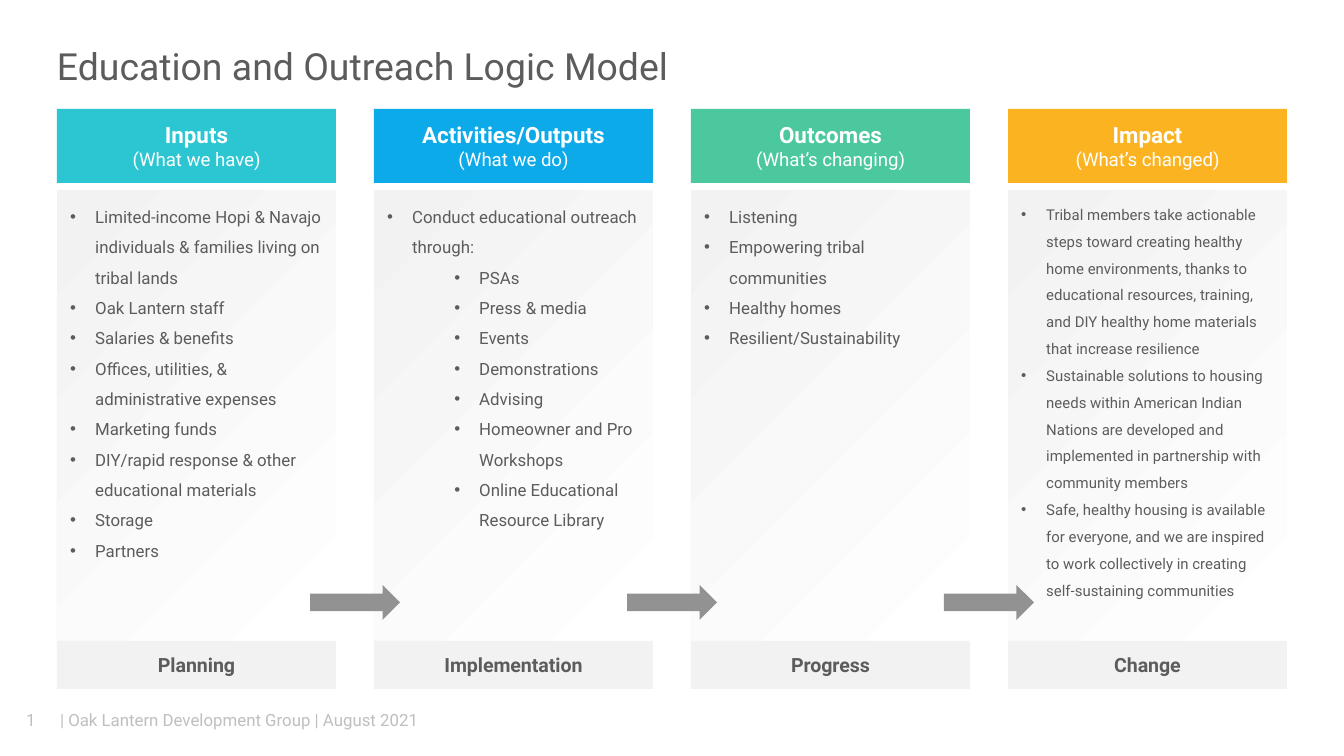
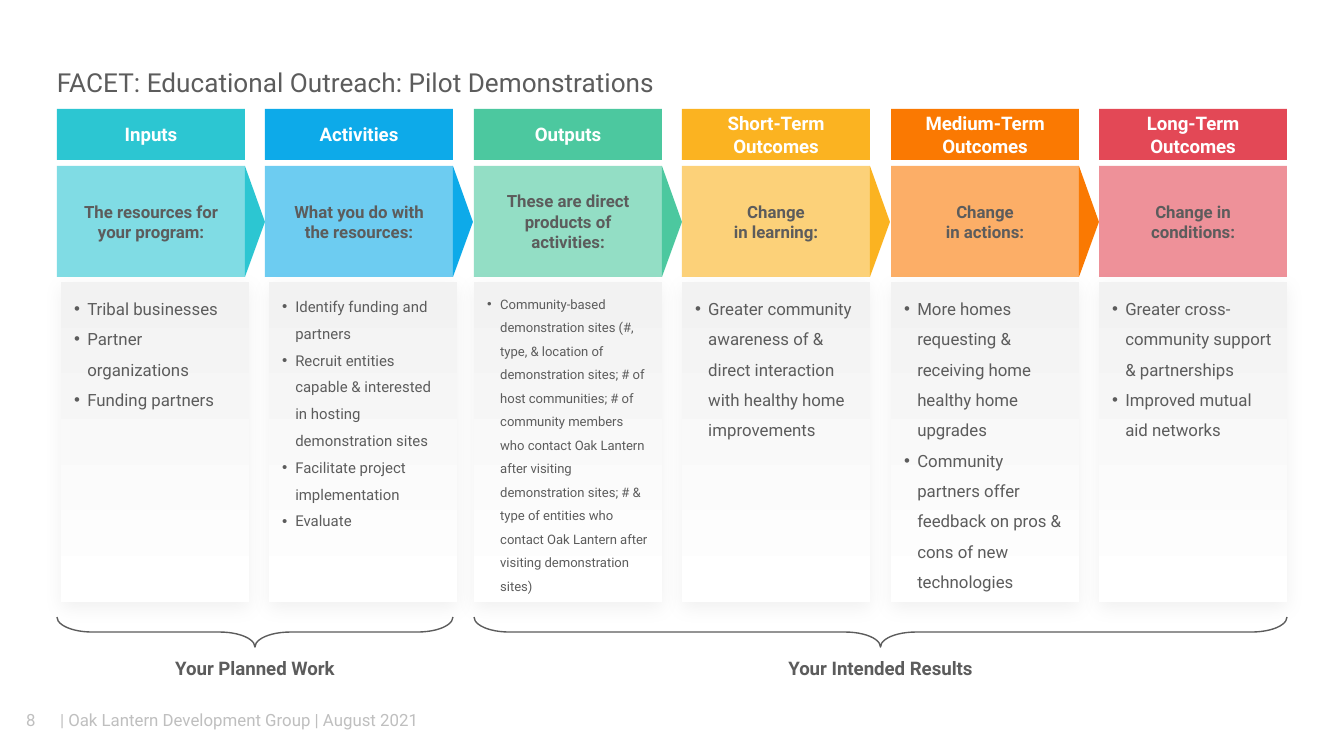
from copy import deepcopy
from dataclasses import dataclass

from lxml import etree
from pptx import Presentation
from pptx import util as u
from pptx.dml.color import RGBColor
from pptx.enum import shapes, text
from pptx.oxml.ns import qn

SCALE = 914400 / 134.4


@dataclass(frozen=True)
class Theme:
    font: str = "Roboto"
    ink: str = "5C5C5C"
    white: str = "FFFFFF"
    pale: str = "F2F2F2"
    muted: str = "BFBFBF"
    arrow: str = "929292"
    teal: str = "2CC6D2"
    blue: str = "0DAAE9"
    green: str = "4CC89F"
    amber: str = "FBB321"
    orange: str = "FA7902"
    red: str = "E34856"
    title: float = 20
    subtitle: float = 14
    heading: float = 12
    stage: float = 10.5
    label: float = 10
    body: float = 9
    small: float = 8
    tiny: float = 7


T = Theme()
ORGANISATION = "Oak Lantern"
LEFT, HEADER_TOP = 57, 109


def px(n):
    return u.Emu(round(n * SCALE))


def rgb(c):
    return RGBColor.from_string(c)


def sub(parent, tag, **attrs):
    return etree.SubElement(parent, qn(tag), {k: str(v) for k, v in attrs.items()})


def add_text(p, words, size, color, bold=False):
    for i, line in enumerate(words.split("\n")):
        if i:
            p.add_line_break()
            p._p.findall(qn("a:br"))[-1].append(deepcopy(r._r.rPr))
        r = p.add_run()
        r.text = line
        r.font.name, r.font.size, r.font.bold = T.font, u.Pt(size), bold
        r.font.color.rgb = rgb(color)


def centre(sp, words, size, color, bold=True):
    tf = sp.text_frame
    tf.word_wrap = True
    tf.vertical_anchor = text.MSO_ANCHOR.MIDDLE
    p = tf.paragraphs[0]
    p.alignment = text.PP_ALIGN.CENTER
    add_text(p, words, size, color, bold)
    return p


def textbox(s, box, words, size, color, bold=False, align=text.PP_ALIGN.LEFT):
    sp = s.shapes.add_textbox(*map(px, box))
    tf = sp.text_frame
    tf.margin_left = tf.margin_right = tf.margin_top = tf.margin_bottom = 0
    p = centre(sp, words, size, color, bold)
    p.alignment = align
    return p


def paint(sp, color, alpha=None):
    sp.shadow.inherit = False
    sp.line.fill.background()
    sp.fill.solid()
    sp.fill.fore_color.rgb = rgb(color)
    if alpha:
        clr = sp._element.spPr.find(".//" + qn("a:srgbClr"))
        sub(clr, "a:alpha", val=alpha * 1000)
    return sp


def block(s, box, color, alpha=None, kind=shapes.MSO_SHAPE.RECTANGLE):
    return paint(s.shapes.add_shape(kind, *map(px, box)), color, alpha)


def gradient(sp, radial):
    sp.fill.gradient()
    for stop, color in zip(sp.fill.gradient_stops, (T.white, T.pale)):
        stop.color.rgb = rgb(color)
    for stop, at in zip(sp.fill.gradient_stops, (0, 1)):
        stop.position = at
    if not radial:
        sp.fill.gradient_angle = 90
        return
    grad = sp._element.spPr.find(qn("a:gradFill"))
    grad.remove(grad.find(qn("a:lin")))
    path = sub(grad, "a:path", path="circle")
    sub(path, "a:fillToRect", l=100000, t=100000)


def soft_shadow(sp):
    effects = sp._element.spPr.find(qn("a:effectLst"))
    shadow = sub(effects, "a:outerShdw", blurRad=127000, dist=38100,
                 dir=5400000, algn="t", rotWithShape=0)
    sub(sub(shadow, "a:srgbClr", val="000000"), "a:alpha", val=5000)


def bullet_panel(s, box, items, size, hang, radial):
    sp = block(s, box, T.pale)
    gradient(sp, radial)
    tf = sp.text_frame
    tf.word_wrap = True
    tf.vertical_anchor = text.MSO_ANCHOR.TOP
    for i, item in enumerate(items):
        level, words = item if isinstance(item, tuple) else (0, item)
        p = tf.add_paragraph() if i else tf.paragraphs[0]
        p.level = level
        p.alignment = text.PP_ALIGN.LEFT
        p.line_spacing = 1.5
        pPr = p._p.get_or_add_pPr()
        pPr.set("marL", str(px(hang + 67 * level)))
        pPr.set("indent", str(-px(hang)))
        sub(pPr, "a:buFont", typeface="Arial")
        sub(pPr, "a:buChar", char="•")
        add_text(p, words, size, T.ink)
    return sp


def frame(prs, number, title, size, title_top):
    s = prs.slides.add_slide(prs.slide_layouts[6])
    textbox(s, (2, 700, 58, 40), number, T.body, T.muted,
            align=text.PP_ALIGN.CENTER)
    textbox(s, (60, 710, 366, 20),
            f"| {ORGANISATION} Development Group | August 2021", T.body, T.muted)
    textbox(s, (LEFT, title_top, 1230, 48), title, size, T.ink)
    return s


def model_column(s, x, y, w, column):
    name, hint, color, stage, size, items = column
    head = block(s, (x, y, w, 74), color)
    p = centre(head, name + "\n", T.heading, T.white)
    p._p.remove(p.runs[-1]._r)
    add_text(p, hint, T.label, T.white)
    bullet_panel(s, (x, y + 81, w, 451), items, size, 25, radial=True)
    centre(block(s, (x, y + 532, w, 48), T.pale), stage, T.stage, T.ink)


def logic_model(prs, columns):
    s = frame(prs, "1", "Education and Outreach Logic Model", T.title, 42)
    pitch, w = 317, 279
    for i, column in enumerate(columns):
        model_column(s, LEFT + i * pitch, HEADER_TOP, w, column)
    for i in range(len(columns) - 1):
        block(s, (LEFT + i * pitch + w - 26, 585, 90, 35), T.arrow,
              kind=shapes.MSO_SHAPE.RIGHT_ARROW)


def pilot_column(s, x, y, w, shift, column):
    name, color, question, size, items = column
    centre(block(s, (x, y, w, 51), color), name, T.label, T.white)
    soft_shadow(bullet_panel(s, (x + shift, y + 173, w, 320), items, size, 13,
                             radial=False))
    centre(block(s, (x, y + 57, w, 111), color, 60), question, T.body, T.ink)


def pointer(s, x, y, w, h, color):
    fb = s.shapes.build_freeform(x, y, scale=SCALE)
    fb.add_line_segments([(x + w, y + h / 2), (x, y + h)], close=True)
    paint(fb.convert_to_shape(), color)


def brace(s, x, y, w, h, label):
    sp = s.shapes.add_shape(shapes.MSO_SHAPE.LEFT_BRACE, px(x + (w - h) / 2),
                            px(y + (h - w) / 2), px(h), px(w))
    sp.rotation = 270
    sp.adjustments[0], sp.adjustments[1] = 1.18, 0.5
    sp.shadow.inherit = False
    sp.fill.background()
    sp.line.color.rgb = rgb(T.ink)
    sp.line.width = u.Pt(0.75)
    p = textbox(s, (x + w / 2 - 108, y + 40, 216, 23), label, T.label, T.ink,
                True, text.PP_ALIGN.CENTER)
    p.space_after = u.Pt(10)


def pilot_model(prs, columns):
    s = frame(prs, "8", "FACET: Educational Outreach: Pilot Demonstrations",
              T.subtitle, 58)
    w, right = 188, 1287
    gap = (right - LEFT - len(columns) * w) / (len(columns) - 1)
    xs = [round(LEFT + i * (w + gap)) for i in range(len(columns))]
    for i, (x, column) in enumerate(zip(xs, columns)):
        pilot_column(s, x, HEADER_TOP, w, 4 if i < 2 else 0, column)
    for x, column in zip(xs[:-1], columns):
        pointer(s, x + w, HEADER_TOP + 57, round(gap), 111, column[1])
    for first, last, label in ((0, 1, "Your Planned Work"),
                               (2, 5, "Your Intended Results")):
        brace(s, xs[first], 617, xs[last] + w - xs[first], 30, label)


MODEL = [
    ("Inputs", "(What we have)", T.teal, "Planning", T.body, [
        "Limited-income Hopi & Navajo individuals & families living on tribal lands",
        f"{ORGANISATION} staff", "Salaries & benefits",
        "Offices, utilities, & administrative expenses", "Marketing funds",
        "DIY/rapid response & other educational materials", "Storage", "Partners"]),
    ("Activities/Outputs", "(What we do)", T.blue, "Implementation", T.body, [
        "Conduct educational outreach through:", (1, "PSAs"), (1, "Press & media"),
        (1, "Events"), (1, "Demonstrations"), (1, "Advising"),
        (1, "Homeowner and Pro Workshops"),
        (1, "Online Educational Resource Library")]),
    ("Outcomes", "(What’s changing)", T.green, "Progress", T.body, [
        "Listening", "Empowering tribal communities", "Healthy homes",
        "Resilient/Sustainability"]),
    ("Impact", "(What’s changed)", T.amber, "Change", T.small, [
        "Tribal members take actionable steps toward creating healthy home "
        "environments, thanks to educational resources, training, and DIY healthy "
        "home materials that increase resilience",
        "Sustainable solutions to housing needs within American Indian Nations are "
        "developed and implemented in partnership with community members",
        "Safe, healthy housing is available for everyone, and we are inspired to "
        "work collectively in creating self-sustaining communities"]),
]

PILOT = [
    ("Inputs", T.teal, "The resources for your program:", T.body, [
        "Tribal businesses", "Partner organizations", "Funding partners"]),
    ("Activities", T.blue, "What you do with\nthe resources:", T.small, [
        "Identify funding and partners",
        "Recruit entities capable & interested in hosting demonstration sites",
        "Facilitate project implementation", "Evaluate"]),
    ("Outputs", T.green, "These are direct products of activities:", T.tiny, [
        "Community-based demonstration sites (#, type, & location of demonstration "
        "sites; # of host communities; # of community members who contact "
        f"{ORGANISATION} after visiting demonstration sites; # & type of entities "
        f"who contact {ORGANISATION} after visiting demonstration sites)"]),
    ("Short-Term Outcomes", T.amber, "Change\nin learning:", T.body, [
        "Greater community awareness of & direct interaction with healthy home "
        "improvements"]),
    ("Medium-Term Outcomes", T.orange, "Change\nin actions:", T.body, [
        "More homes requesting & receiving home healthy home upgrades",
        "Community partners offer feedback on pros & cons of new technologies"]),
    ("Long-Term Outcomes", T.red, "Change in conditions:", T.body, [
        "Greater cross-community support & partnerships",
        "Improved mutual aid networks"]),
]


def main():
    prs = Presentation()
    prs.slide_width, prs.slide_height = px(1344), px(756)
    logic_model(prs, MODEL)
    pilot_model(prs, PILOT)
    prs.save("out.pptx")


if __name__ == "__main__":
    main()
